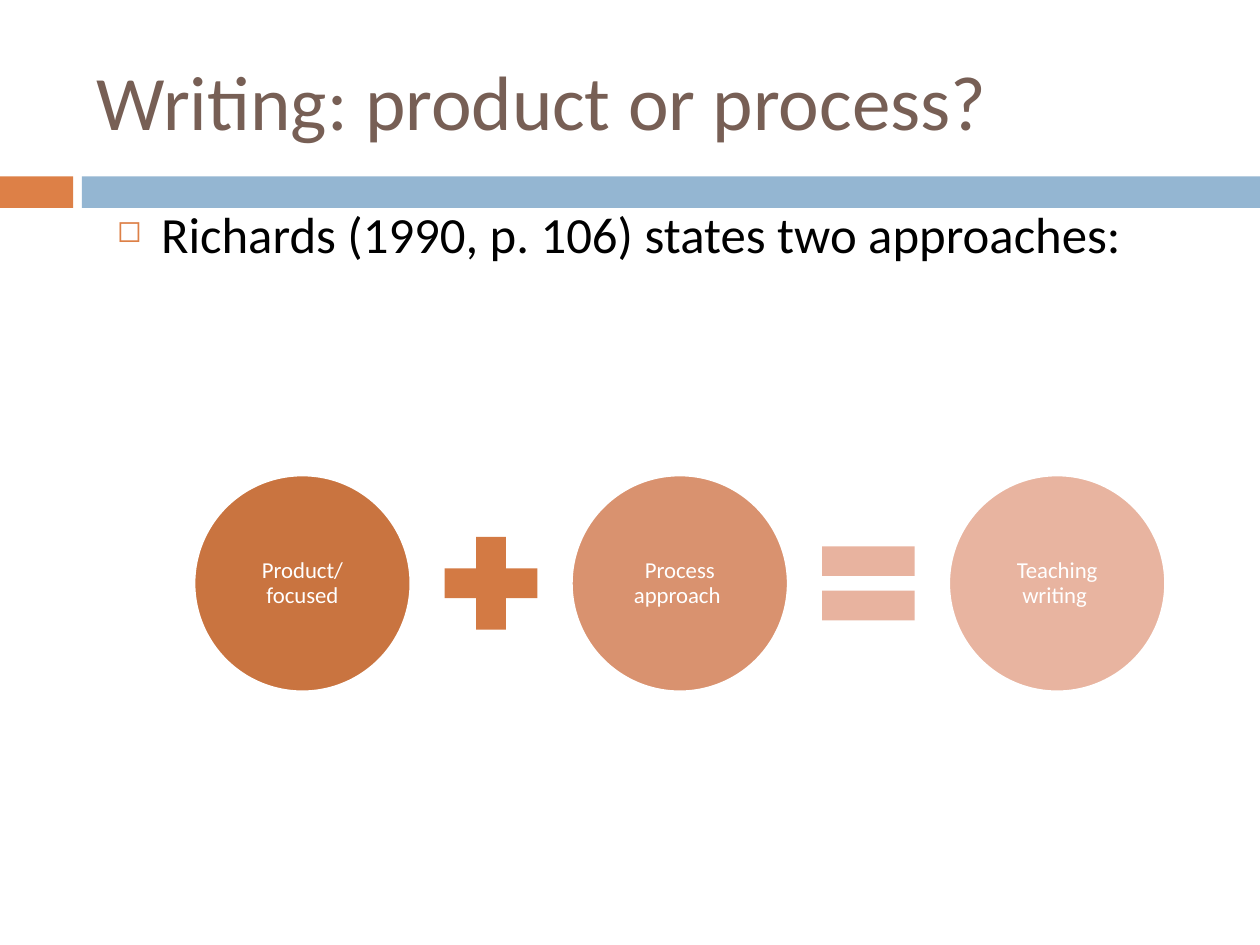
from lxml.etree import SubElement
from pptx import Presentation
from pptx.dml.color import RGBColor
from pptx.enum.shapes import MSO_SHAPE as SHAPE
from pptx.enum.text import MSO_ANCHOR as ANCHOR, PP_ALIGN as ALIGN
from pptx.oxml.ns import qn
from pptx.util import Inches, Pt

COLS, ROWS = 100, 75
CELL = Inches(0.1)


def grid(*cells):
    """Turn grid columns and rows into slide lengths."""
    return [round(c * CELL) for c in cells]


def color(hex_code):
    """Return the colour for a hex string."""
    return RGBColor.from_string(hex_code)


def add_shape(s, kind, box, fill, line=None):
    """Add a flat preset shape in a grid box."""
    sp = s.shapes.add_shape(kind, *grid(*box))
    sp.shadow.inherit = False
    sp.fill.solid()
    sp.fill.fore_color.rgb = color(fill)
    if line:
        sp.line.color.rgb = color(line)
        sp.line.width = Pt(1.5)
    else:
        sp.line.fill.background()
    return sp


def write(sp, text, size, ink, anchor=ANCHOR.TOP, align=ALIGN.LEFT, inset=None,
          spacing=None, before=None):
    """Write one formatted paragraph into a shape and return it."""
    tf = sp.text_frame
    tf.word_wrap = True
    tf.vertical_anchor = anchor
    if inset is not None:
        tf.margin_left = tf.margin_right = tf.margin_top = tf.margin_bottom = Inches(inset)
    p = tf.paragraphs[0]
    p.alignment = align
    if spacing:
        p.line_spacing = spacing
    if before:
        p.space_before = Pt(before)
    r = p.add_run()
    r.text = text
    r.font.name = "Calibri"
    r.font.size = Pt(size)
    r.font.color.rgb = color(ink)
    return p


def add_bullet(p, char, ink, percent, indent):
    """Give a paragraph a coloured hanging bullet."""
    pPr = p._p.get_or_add_pPr()
    pPr.set("marL", str(indent))
    pPr.set("indent", str(-indent))
    SubElement(SubElement(pPr, qn("a:buClr")), qn("a:srgbClr"), val=ink)
    SubElement(pPr, qn("a:buSzPct"), val=str(percent * 1000))
    SubElement(pPr, qn("a:buChar"), char=char)


def add_band(s, x, y, w, h):
    """Draw the split band under the title."""
    tab, gap = 5.8, 0.7
    add_shape(s, SHAPE.RECTANGLE, (x, y, tab, h), "DD8047")
    add_shape(s, SHAPE.RECTANGLE, (x + tab + gap, y, w - tab - gap, h), "94B6D2")


def add_title(s, *box):
    """Place the slide title."""
    sp = s.shapes.add_textbox(*grid(*box))
    write(sp, "Writing: product or process?", 44, "775F55", anchor=ANCHOR.MIDDLE)


def add_body(s, *box):
    """Place the bulleted statement."""
    sp = s.shapes.add_textbox(*grid(*box))
    p = write(sp, "Richards (1990, p. 106) states two approaches:", 29, "000000", before=7)
    add_bullet(p, "◻", "DD8047", 60, Inches(0.35))


def add_equation(s, x, y, w, h):
    """Draw circles joined by a plus and an equals sign."""
    terms = [("Product/focused", "C97440"), ("Process approach ", "D9926F"),
             ("Teaching writing ", "E8B4A0")]
    signs = [(SHAPE.MATH_PLUS, "D37A44"), (SHAPE.MATH_EQUAL, "E8B39F")]
    pitch = (w - h) / (len(terms) - 1)
    size = 10
    for i, (text, fill) in enumerate(terms):
        sp = add_shape(s, SHAPE.OVAL, (x + i * pitch, y, h, h), fill, line="FFFFFF")
        write(sp, text, 13, "FFFFFF", anchor=ANCHOR.MIDDLE, align=ALIGN.CENTER,
              inset=0.02, spacing=0.9)
    for i, (kind, fill) in enumerate(signs):
        left = x + (i + 0.5) * pitch + (h - size) / 2
        add_shape(s, kind, (left, y + (h - size) / 2, size, size), fill)


def main():
    """Build the slide and save it."""
    prs = Presentation()
    prs.slide_width, prs.slide_height = grid(COLS, ROWS)
    s = prs.slides.add_slide(prs.slide_layouts[6])
    add_band(s, 0, 14, COLS, 2.5)
    add_title(s, 6.7, 2.5, 89.2, 10.8)
    add_body(s, 8.3, 15.6, 90, 49.5)
    add_equation(s, 15.4, 37.7, 77.1, 17.2)
    prs.save("out.pptx")


if __name__ == "__main__":
    main()
